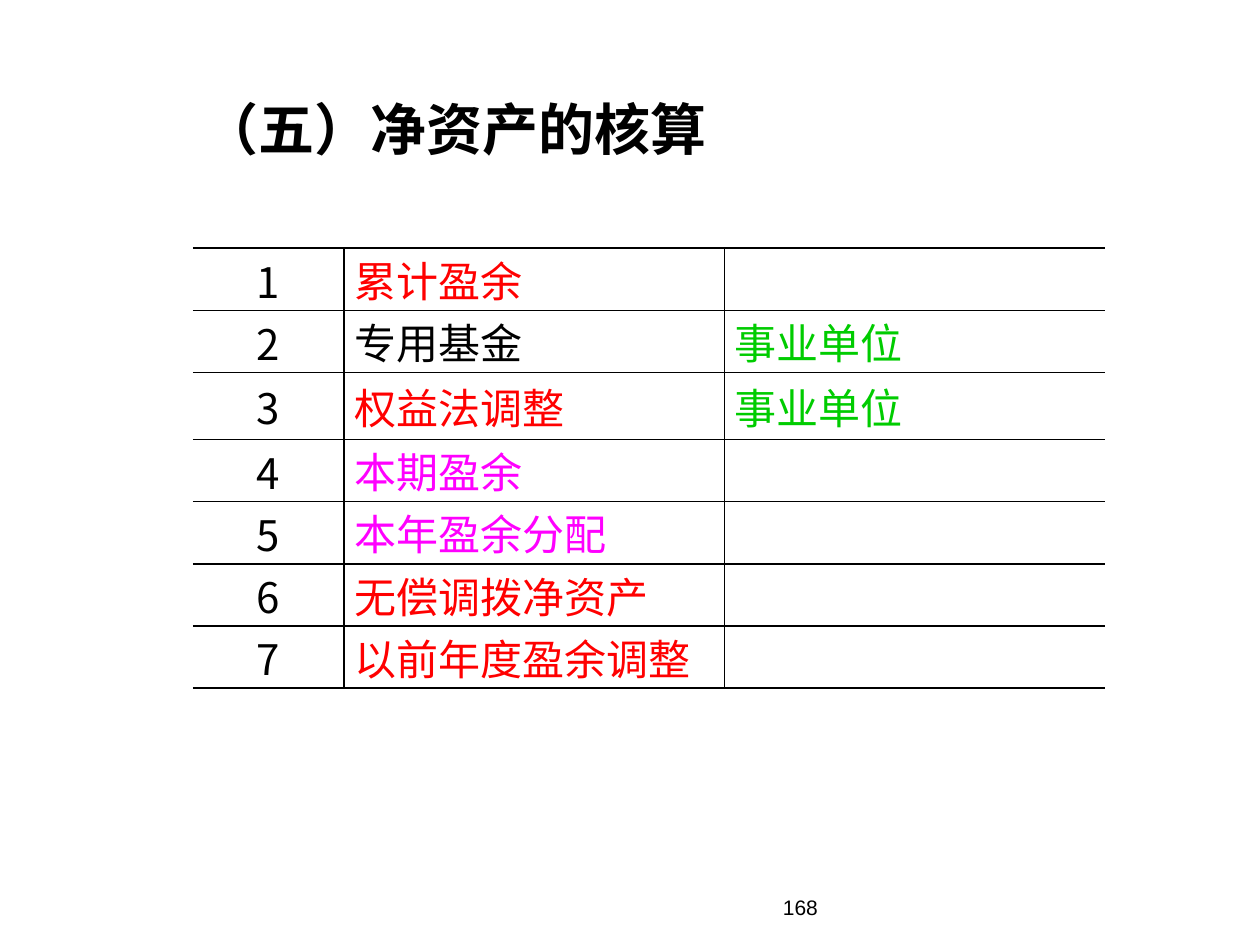
from lxml import etree
from pptx import Presentation
from pptx.dml.color import RGBColor
from pptx.enum.text import MSO_ANCHOR, PP_ALIGN
from pptx.oxml.ns import qn
from pptx.util import Inches, Pt

BLACK = RGBColor(0x00, 0x00, 0x00)
RED = RGBColor(0xFF, 0x00, 0x00)
MAGENTA = RGBColor(0xFF, 0x00, 0xFF)
GREEN = RGBColor(0x00, 0xCC, 0x00)
CJK_FONT = "Noto Sans CJK SC"

TITLE = "（五）净资产的核算"
ACCOUNTS = [
    ("累计盈余", RED, ""),
    ("专用基金", BLACK, "事业单位"),
    ("权益法调整", RED, "事业单位"),
    ("本期盈余", MAGENTA, ""),
    ("本年盈余分配", MAGENTA, ""),
    ("无偿调拨净资产", RED, ""),
    ("以前年度盈余调整", RED, ""),
]
COLUMN_WIDTHS = [1.2, 3.02, 3.02]
ROW_HEIGHTS = [1.29, 0.49, 0.49, 0.53, 0.49, 0.49, 0.49, 0.49, 2.0]


def format_paragraph(paragraph, font_name, size, color, bold=False, alignment=PP_ALIGN.LEFT):
    """Set the font of one paragraph, for Latin and East Asian text."""
    paragraph.alignment = alignment
    font = paragraph.font
    font.name = font_name
    font.size = Pt(size)
    font.bold = bold
    font.color.rgb = color
    east_asian = etree.Element(qn("a:ea"), typeface=font_name)
    font._element.find(qn("a:latin")).addnext(east_asian)


def set_borders(cell, visible_sides):
    """Draw thin black lines on the named sides of a cell and hide the others."""
    properties = cell._tc.get_or_add_tcPr()
    for position, side in enumerate("LRTB"):
        line = etree.Element(qn(f"a:ln{side}"), w=str(Pt(1)))
        if side in visible_sides:
            fill = etree.SubElement(line, qn("a:solidFill"))
            etree.SubElement(fill, qn("a:srgbClr"), val=str(BLACK))
        else:
            etree.SubElement(line, qn("a:noFill"))
        properties.insert(position, line)


def fill_cell(cell, text, size, color, bold=False, centered=False):
    """Write text into a cell, with the tight margins of a number if centred."""
    side_margin = Inches(0.01 if centered else 0.08)
    cell.margin_left = cell.margin_right = side_margin
    cell.margin_top = Inches(0.01 if centered else 0)
    cell.margin_bottom = 0
    cell.vertical_anchor = MSO_ANCHOR.MIDDLE
    cell.text = text
    alignment = PP_ALIGN.CENTER if centered else PP_ALIGN.LEFT
    format_paragraph(cell.text_frame.paragraphs[0], CJK_FONT, size, color, bold, alignment)


def add_accounts_table(slide, left, top, width, height):
    """Add the table with its heading row, the accounts and the empty last row."""
    row_count, column_count = len(ROW_HEIGHTS), len(COLUMN_WIDTHS)
    table = slide.shapes.add_table(row_count, column_count, left, top, width, height).table
    table.first_row = table.horz_banding = False
    for column, column_width in zip(table.columns, COLUMN_WIDTHS):
        column.width = Inches(column_width)
    for row, row_height in zip(table.rows, ROW_HEIGHTS):
        row.height = Inches(row_height)

    last = row_count - 1
    for row_index in range(row_count):
        for column_index, vertical_sides in enumerate(("R", "LR", "L")):
            cell = table.cell(row_index, column_index)
            cell.fill.background()
            sides = {0: "B", last: "T"}.get(row_index, "TB" + vertical_sides)
            set_borders(cell, sides)
    table.cell(0, 0).merge(table.cell(0, 1))
    table.cell(last, 0).merge(table.cell(last, column_count - 1))

    fill_cell(table.cell(0, 0), TITLE, 32, BLACK, bold=True)
    table.cell(0, 0).vertical_anchor = MSO_ANCHOR.TOP
    for number, (account, color, scope) in enumerate(ACCOUNTS, start=1):
        fill_cell(table.cell(number, 0), str(number), 24, BLACK, centered=True)
        fill_cell(table.cell(number, 1), account, 24, color)
        if scope:
            fill_cell(table.cell(number, 2), scope, 24, GREEN)


def add_page_number(slide, left, top, width, height):
    """Add the page number at the lower right of its box."""
    text_frame = slide.shapes.add_textbox(left, top, width, height).text_frame
    text_frame.word_wrap = True
    text_frame.vertical_anchor = MSO_ANCHOR.BOTTOM
    text_frame.text = "168"
    format_paragraph(text_frame.paragraphs[0], "Arial", 12, BLACK, alignment=PP_ALIGN.RIGHT)


def main():
    """Build the slide and save it."""
    presentation = Presentation()
    presentation.slide_width = Inches(10)
    presentation.slide_height = Inches(7.5)
    slide = presentation.slides.add_slide(presentation.slide_layouts[6])
    add_accounts_table(
        slide, Inches(1.53), Inches(0.68), Inches(sum(COLUMN_WIDTHS)), Inches(sum(ROW_HEIGHTS))
    )
    add_page_number(slide, Inches(3.42), Inches(6.83), Inches(3.17), Inches(0.52))
    presentation.save("out.pptx")


if __name__ == "__main__":
    main()
